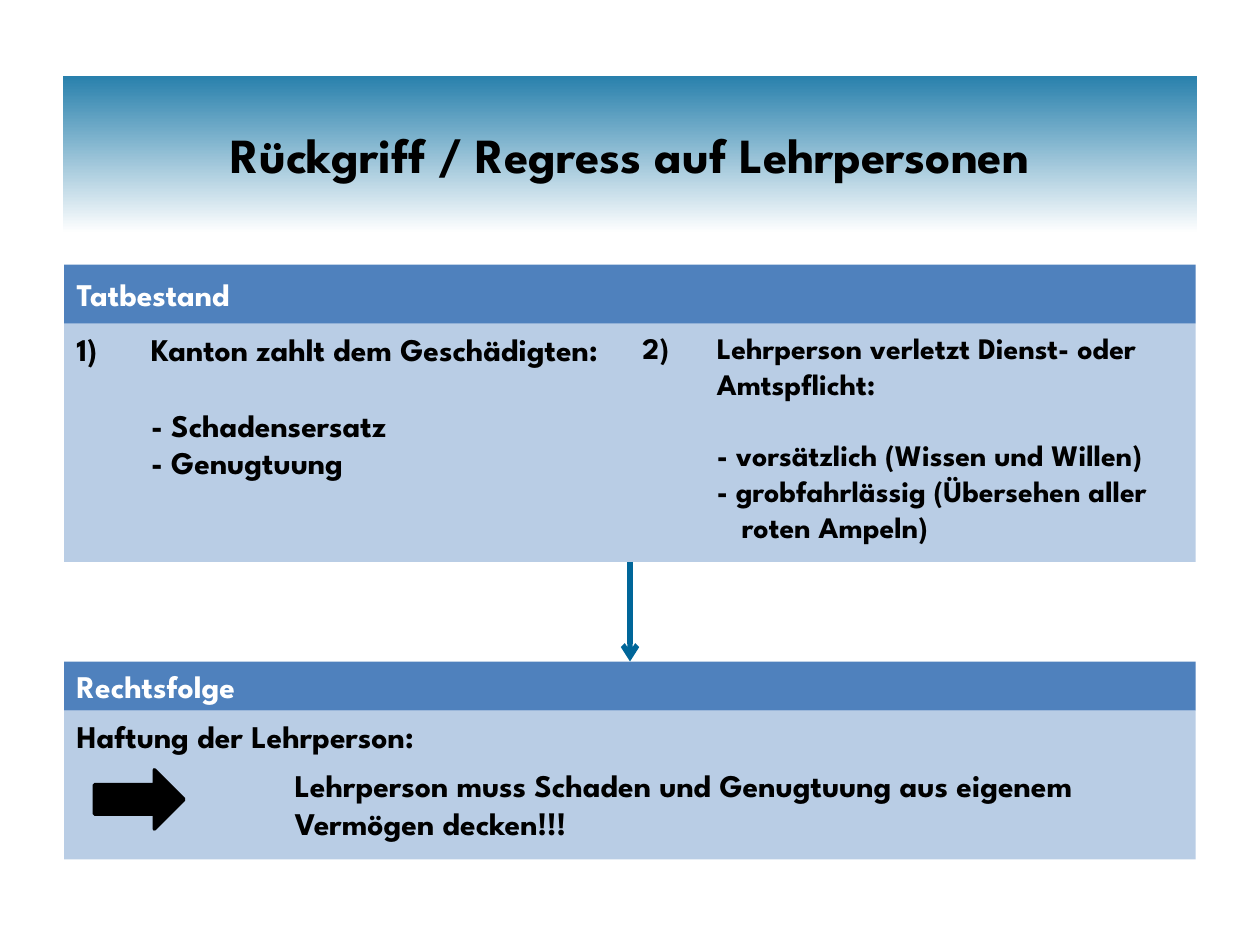
"""Build the slide on recourse against teachers."""
import pptx
import pptx.chart.data
import pptx.dml.color
import pptx.enum.shapes
import pptx.enum.text
import pptx.oxml.ns
import pptx.util
from lxml import etree

Inches = pptx.util.Inches
Pt = pptx.util.Pt
RGBColor = pptx.dml.color.RGBColor
Shape = pptx.enum.shapes.MSO_SHAPE
Anchor = pptx.enum.text.MSO_ANCHOR
Align = pptx.enum.text.PP_ALIGN
qn = pptx.oxml.ns.qn

FONT = "League Spartan"
BLACK = RGBColor(0x00, 0x00, 0x00)
WHITE = RGBColor(0xFF, 0xFF, 0xFF)
TEAL = RGBColor(0x28, 0x80, 0xAC)
BLUE = RGBColor(0x4F, 0x81, 0xBD)
PALE = RGBColor(0xB9, 0xCD, 0xE5)
DEEP = RGBColor(0x00, 0x66, 0x99)

LEFT, WIDTH = 0.51, 8.98
HALF = WIDTH / 2
MID = LEFT + HALF
HANG = 0.59


def style(para, size, color=BLACK, align=Align.LEFT):
    """Set the font and alignment of a paragraph."""
    para.alignment = align
    font = para.font
    font.name, font.size, font.bold = FONT, Pt(size), True
    font.color.rgb = color


def indent(para, left, first=0, start=None):
    """Indent a paragraph and number it from start if given."""
    props = para._p.get_or_add_pPr()
    props.set("marL", str(Inches(left)))
    props.set("indent", str(Inches(first)))
    if start:
        num = etree.SubElement(props, qn("a:buAutoNum"), type="arabicParenR")
        num.set("startAt", str(start))
    else:
        etree.SubElement(props, qn("a:buNone"))


def add_title(slide, text):
    """Place the title on its fading band."""
    title = slide.shapes.title
    title.left, title.top = Inches(0.5), Inches(0.6)
    title.width, title.height = Inches(9), Inches(1.25)
    title.fill.gradient()
    title.fill.gradient_angle = 270
    for stop, color in zip(title.fill.gradient_stops, (TEAL, WHITE)):
        stop.color.rgb = color
    frame = title.text_frame
    frame.text = text
    frame.vertical_anchor = Anchor.MIDDLE
    style(frame.paragraphs[0], 28, BLACK, Align.CENTER)


def add_block(slide, box, fill, kind=Shape.RECTANGLE):
    """Add a plain filled shape."""
    shape = slide.shapes.add_shape(kind, *map(Inches, box))
    shape.shadow.inherit = False
    shape.fill.solid()
    shape.fill.fore_color.rgb = fill
    shape.line.fill.background()
    shape.text_frame.vertical_anchor = Anchor.TOP
    return shape


def add_head(slide, top, height, text):
    """Add a section heading bar."""
    frame = add_block(slide, (LEFT, top, WIDTH, height), BLUE).text_frame
    frame.text = text
    frame.vertical_anchor = Anchor.MIDDLE
    style(frame.paragraphs[0], 18, WHITE)


def add_case(slide, left, start, size, lead, items):
    """Add a numbered condition with dashed items below it."""
    frame = add_block(slide, (left, 2.57, HALF, 1.89), PALE).text_frame
    para = frame.paragraphs[0]
    para.text = lead
    indent(para, HANG, -HANG, start)
    style(para, size)
    for index, (text, hang) in enumerate(items):
        para = frame.add_paragraph()
        para.text = text
        indent(para, HANG + hang, -hang)
        if index == 0:
            para.space_before = Pt(size * 1.2)
        style(para, size)


def add_result(slide):
    """Add the legal consequence with its block arrow."""
    frame = add_block(slide, (LEFT, 5.64, WIDTH, 1.18), PALE).text_frame
    frame.text = "Haftung der Lehrperson:"
    style(frame.paragraphs[0], 18)
    arrow = add_block(slide, (0.75, 6.11, 0.71, 0.47), BLACK, Shape.RIGHT_ARROW)
    arrow.line.color.rgb = BLACK
    arrow.line.width = Pt(2)
    box = slide.shapes.add_textbox(*map(Inches, (2.24, 6.03, 6.77, 0.71)))
    frame = box.text_frame
    frame.word_wrap = True
    frame.text = "Lehrperson muss Schaden und Genugtuung aus eigenem Vermögen decken!!!"
    style(frame.paragraphs[0], 18)


def add_link(slide, x, top, end):
    """Add a downward arrow line."""
    kind = pptx.enum.shapes.MSO_CONNECTOR.STRAIGHT
    link = slide.shapes.add_connector(kind, *map(Inches, (x, top, x, end)))
    link.line.color.rgb = DEEP
    link.line.width = Pt(3)
    etree.SubElement(link.line._get_or_add_ln(), qn("a:tailEnd"), type="arrow")
    etree.SubElement(link._element.spPr, qn("a:effectLst"))


def main():
    """Build and save the slide."""
    deck = pptx.Presentation()
    deck.slide_width, deck.slide_height = Inches(10), Inches(7.5)
    slide = deck.slides.add_slide(deck.slide_layouts[5])
    add_title(slide, "Rückgriff / Regress auf Lehrpersonen")
    add_head(slide, 2.1, 0.47, "Tatbestand")
    add_case(slide, LEFT, 1, 18, "Kanton zahlt dem Geschädigten:",
             [("- Schadensersatz", 0), ("- Genugtuung", 0)])
    add_case(slide, MID, 2, 17, "Lehrperson verletzt Dienst- oder Amtspflicht:",
             [("- vorsätzlich (Wissen und Willen)", 0),
              ("- grobfahrlässig (Übersehen aller roten Ampeln)", 0.2)])
    add_head(slide, 5.25, 0.39, "Rechtsfolge")
    add_result(slide)
    add_link(slide, MID, 4.46, 5.25)
    deck.save("out.pptx")


if __name__ == "__main__":
    main()
